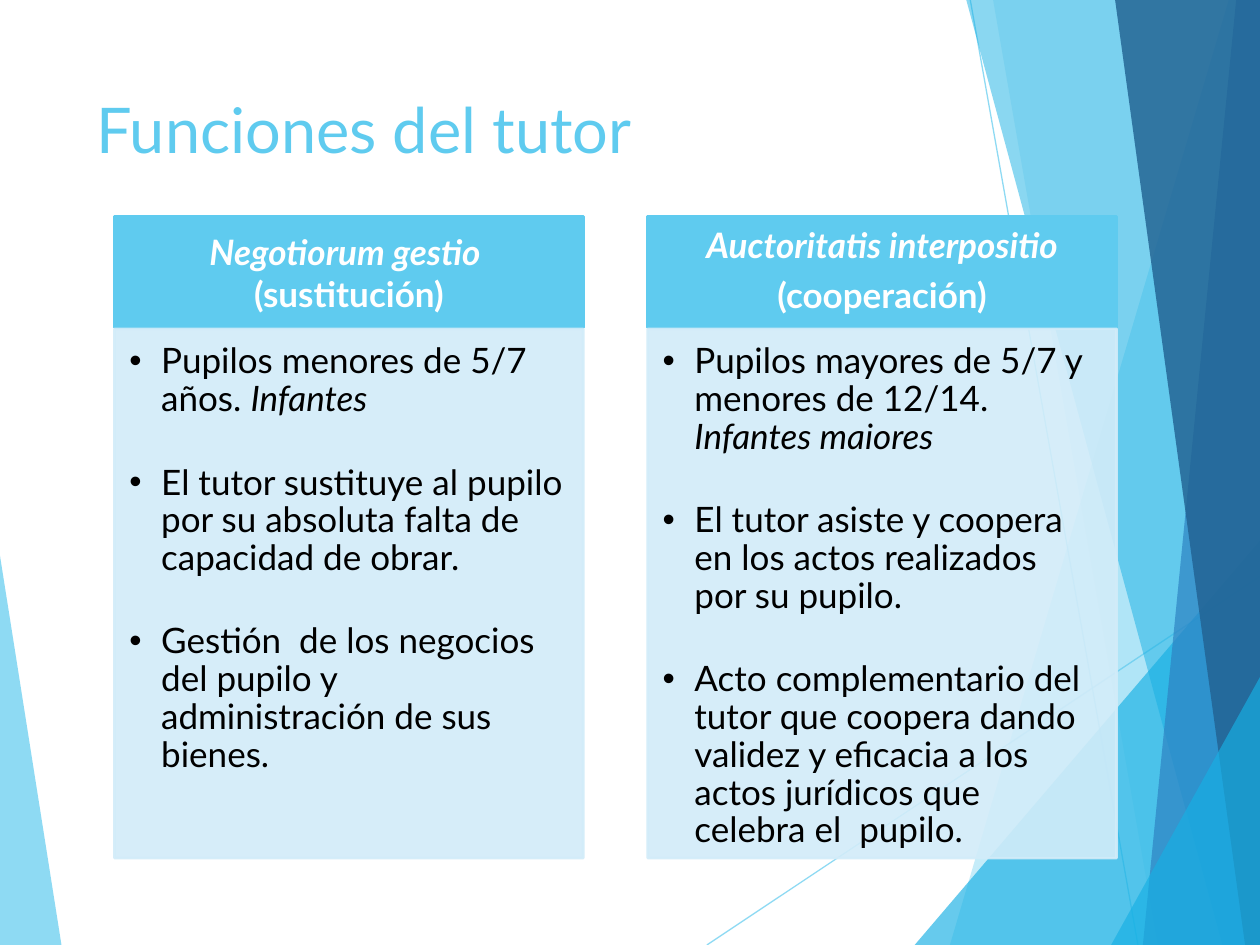
from lxml.etree import SubElement
from pptx import Presentation
from pptx.dml.color import RGBColor
from pptx.enum.shapes import MSO_CONNECTOR as Connector, MSO_SHAPE as Shape
from pptx.enum.text import MSO_ANCHOR as Anchor, PP_ALIGN as Align
from pptx.oxml.ns import qn
from pptx.util import Cm, Pt

COLORS = {
    "sky": "5FCBEF",
    "cyan": "17B0E4",
    "blue": "2E83C3",
    "navy": "226292",
    "pale": "D2ECF9",
    "white": "FFFFFF",
    "black": "000000",
}
FONT = "Lato"
WIDTH, HEIGHT = 25.4, 19.05

FACETS = [
    ("sky", 36, [(24.77, 0), (19.15, HEIGHT), (WIDTH, HEIGHT), (WIDTH, 0)]),
    ("sky", 20, [(20.02, 0), (23.34, HEIGHT), (WIDTH, HEIGHT), (WIDTH, 0)]),
    ("cyan", 66, [(18.44, HEIGHT), (WIDTH, 10.9), (WIDTH, HEIGHT)]),
    ("cyan", 50, [(19.48, 0), (24.64, HEIGHT), (WIDTH, HEIGHT), (WIDTH, 0)]),
    ("blue", 70, [(24.92, 0), (23.04, HEIGHT), (WIDTH, HEIGHT), (WIDTH, 0)]),
    ("navy", 82, [(22.48, 0), (25.1, HEIGHT), (WIDTH, HEIGHT), (WIDTH, 0)]),
    ("cyan", 66, [(22.4, HEIGHT), (WIDTH, 13.65), (WIDTH, HEIGHT)]),
]
LEFT_FACET = ("sky", 70, [(0, 11.2), (1.24, HEIGHT), (0, HEIGHT)])
RAYS = [((14.25, HEIGHT), (WIDTH, 11.62)), ((19.56, 0), (22.94, HEIGHT))]

COLUMNS = [
    {
        "heading": [[("Negotiorum gestio ", True)], [("(sustitución)", False)]],
        "heading_format": {},
        "points": [
            [("Pupilos menores de 5/7 años. ", False), ("Infantes", True)],
            [("El tutor sustituye al pupilo por su absoluta falta de capacidad de obrar.", False)],
            [("Gestión  de los negocios del pupilo y administración de sus bienes.", False)],
        ],
    },
    {
        "heading": [[("Auctoritatis interpositio", True)], [("(cooperación)", False)]],
        "heading_format": {"line_spacing": 0.9, "after": 7},
        "points": [
            [("Pupilos mayores de 5/7 y menores de 12/14. ", False), ("Infantes maiores", True)],
            [("El tutor asiste y coopera en los actos realizados por su pupilo.", False)],
            [("Acto complementario del tutor que coopera dando validez y eficacia "
              "a los actos jurídicos que celebra el  pupilo.", False)],
        ],
    },
]


def paint(part, color, alpha=100):
    part.solid()
    part.fore_color.rgb = RGBColor.from_string(COLORS[color])
    if alpha < 100:
        value = part._xPr.find(".//" + qn("a:srgbClr"))
        SubElement(value, qn("a:alpha"), val=str(alpha * 1000))


def add_facet(slide, color, alpha, corners):
    points = [(Cm(x), Cm(y)) for x, y in corners]
    builder = slide.shapes.build_freeform(*points[0])
    builder.add_line_segments(points[1:], close=True)
    facet = builder.convert_to_shape()
    facet.shadow.inherit = False
    paint(facet.fill, color, alpha)
    facet.line.fill.background()


def add_ray(slide, start, end):
    ray = slide.shapes.add_connector(
        Connector.STRAIGHT, *(Cm(value) for value in start + end))
    ray.line.width = Pt(0.75)
    paint(ray.line.fill, "sky", 70)
    SubElement(ray._element.spPr, qn("a:effectLst"))


def add_panel(slide, left, top, width, height, color, alpha=100):
    panel = slide.shapes.add_shape(
        Shape.RECTANGLE, Cm(left), Cm(top), Cm(width), Cm(height))
    panel.shadow.inherit = False
    paint(panel.fill, color, alpha)
    panel.line.width = Pt(1.5)
    paint(panel.line.fill, color, alpha)
    return panel


def add_bullet(paragraph):
    properties = paragraph._p.get_or_add_pPr()
    properties.set("marL", str(Cm(0.64)))
    properties.set("indent", str(-Cm(0.64)))
    SubElement(properties, qn("a:buFont"), typeface="Arial")
    SubElement(properties, qn("a:buChar"), char="•")


def write(holder, paragraphs, size=20, color="black", bold=False, align=Align.LEFT,
          anchor=Anchor.TOP, insets=(0.25, 0.13, 0.25, 0.13),
          line_spacing=1.0, after=0, bullets=False):
    frame = holder.text_frame
    frame.word_wrap = True
    frame.vertical_anchor = anchor
    (frame.margin_left, frame.margin_top,
     frame.margin_right, frame.margin_bottom) = (Cm(inset) for inset in insets)
    for index, pieces in enumerate(paragraphs):
        paragraph = frame.add_paragraph() if index else frame.paragraphs[0]
        paragraph.alignment = align
        paragraph.line_spacing = line_spacing
        paragraph.space_after = Pt(after)
        if bullets:
            add_bullet(paragraph)
        for text, italic in pieces:
            run = paragraph.add_run()
            run.text = text
            run.font.name = FONT
            run.font.size = Pt(size)
            run.font.bold = bold
            run.font.italic = italic
            run.font.color.rgb = RGBColor.from_string(COLORS[color])


def add_column(slide, left, column):
    width = 9.45
    heading = add_panel(slide, left, 4.37, width, 2.24, "sky")
    write(heading, column["heading"], color="white", bold=True, align=Align.CENTER,
          anchor=Anchor.MIDDLE, insets=(0.41, 0.23, 0.41, 0.23),
          **column["heading_format"])
    body = add_panel(slide, left, 6.63, width, 10.67, "pale", 90)
    write(body, column["points"], insets=(0.3, 0.3, 0.41, 0.43),
          line_spacing=0.9, after=26, bullets=True)


def main():
    deck = Presentation()
    deck.slide_width, deck.slide_height = Cm(WIDTH), Cm(HEIGHT)
    slide = deck.slides.add_slide(deck.slide_layouts[6])

    add_facet(slide, *LEFT_FACET)
    for start, end in RAYS:
        add_ray(slide, start, end)
    for facet in FACETS:
        add_facet(slide, *facet)

    title = slide.shapes.add_textbox(Cm(1.7), Cm(1.7), Cm(17.63), Cm(3.66))
    write(title, [[("Funciones del tutor", False)]], size=36, color="sky")
    for index, column in enumerate(COLUMNS):
        add_column(slide, 2.31 + index * 10.75, column)

    deck.save("out.pptx")


if __name__ == "__main__":
    main()
